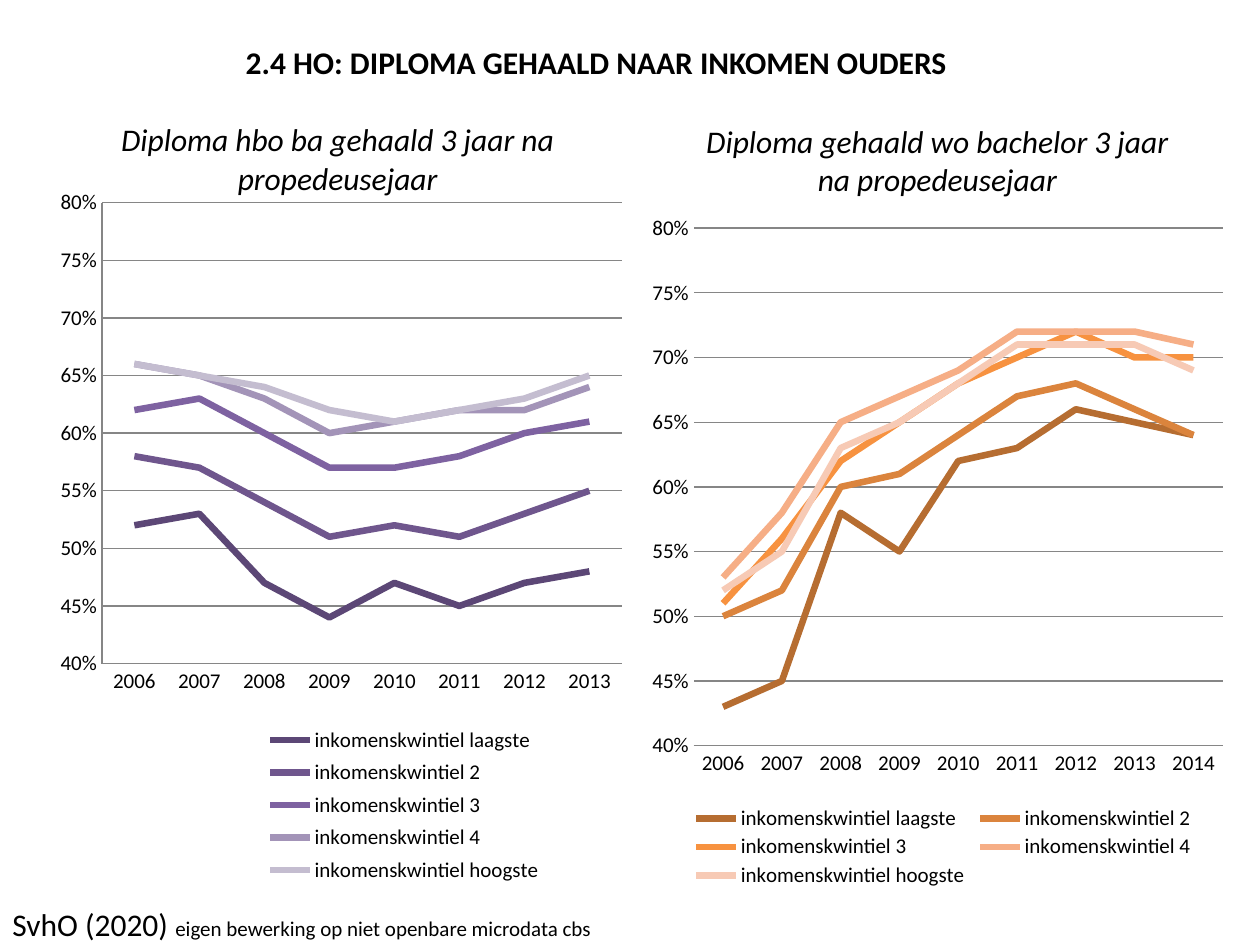
from dataclasses import dataclass
from typing import Optional

from lxml.etree import SubElement
from pptx import Presentation
from pptx.chart.data import CategoryChartData
from pptx.dml.color import RGBColor
from pptx.enum.chart import XL_CHART_TYPE, XL_LEGEND_POSITION, XL_TICK_MARK
from pptx.enum.text import MSO_ANCHOR, PP_ALIGN
from pptx.oxml.ns import qn
from pptx.util import Pt


@dataclass(frozen=True)
class Theme:
    font: str = "Calibri"
    text: str = "000000"
    grid: str = "868686"
    purples: tuple = ("5C4776", "6F568D", "7E62A1", "A394B8", "C4BDD0")
    oranges: tuple = ("B66D31", "DB843D", "F79240", "F6AE86", "F7CAB5")
    title_size: float = 18
    small_size: float = 12
    line_width: float = 3.75
    grid_width: float = 0.75


@dataclass(frozen=True)
class LinePanel:
    title: str
    box: tuple  # left, top, width, height in points
    first_year: int
    values: tuple  # one row of percentages per income quintile
    colors: tuple
    plot: tuple  # x, y, w, h as fractions of the chart
    legend: tuple
    axis_color: Optional[str]


THEME = Theme()
QUINTILES = [f"inkomenskwintiel {q}" for q in ("laagste", 2, 3, 4, "hoogste")]

PANELS = (
    LinePanel(
        "Diploma gehaald wo bachelor 3 jaar na propedeusejaar",
        (365.8, 51.8, 339.8, 462.2), 2006,
        ((43, 45, 58, 55, 62, 63, 66, 65, 64),
         (50, 52, 60, 61, 64, 67, 68, 66, 64),
         (51, 56, 62, 65, 68, 70, 72, 70, 70),
         (53, 58, 65, 67, 69, 72, 72, 72, 71),
         (52, 55, 63, 65, 68, 71, 71, 71, 69)),
        THEME.oranges, (0.09, 0.17, 0.89, 0.64), (0.08, 0.88, 0.86, 0.11), None),
    LinePanel(
        "Diploma hbo ba gehaald 3 jaar na propedeusejaar",
        (20.2, 51.1, 345.6, 462.2), 2006,
        ((52, 53, 47, 44, 47, 45, 47, 48),
         (58, 57, 54, 51, 52, 51, 53, 55),
         (62, 63, 60, 57, 57, 58, 60, 61),
         (66, 65, 63, 60, 61, 62, 62, 64),
         (66, 65, 64, 62, 61, 62, 63, 65)),
        THEME.purples, (0.11, 0.14, 0.86, 0.57), (0.37, 0.78, 0.48, 0.21), THEME.grid),
)


def style_font(font, size: float, bold: bool = False, italic: bool = False) -> None:
    font.name, font.size = THEME.font, Pt(size)
    font.bold, font.italic = bold, italic
    font.color.rgb = RGBColor.from_string(THEME.text)


def style_line(line, color: Optional[str], width: float) -> None:
    if color is None:
        line.fill.background()
        return
    line.color.rgb = RGBColor.from_string(color)
    line.width = Pt(width)


def set_layout(parent, index: int, box: tuple, inner: bool = False) -> None:
    """Place a plot area or legend by fractions of the chart."""
    for old in parent.findall(qn("c:layout")):
        parent.remove(old)
    layout = SubElement(parent, qn("c:layout"))
    parent.insert(index, layout)
    manual = SubElement(layout, qn("c:manualLayout"))
    settings = [("layoutTarget", "inner")] if inner else []
    settings += [("xMode", "edge"), ("yMode", "edge")]
    settings += zip("xywh", box)
    for tag, value in settings:
        SubElement(manual, qn(f"c:{tag}")).set("val", str(value))


def add_panel(slide, panel: LinePanel) -> None:
    data = CategoryChartData(number_format="0%")
    data.categories = [str(panel.first_year + i) for i in range(len(panel.values[0]))]
    for name, row in zip(QUINTILES, panel.values):
        data.add_series(name, [v / 100 for v in row])
    box = [Pt(v) for v in panel.box]
    chart = slide.shapes.add_chart(XL_CHART_TYPE.LINE, *box, data).chart
    style_font(chart.font, THEME.small_size)

    # Title
    tf = chart.chart_title.text_frame
    tf.text = panel.title
    style_font(tf.paragraphs[0].runs[0].font, THEME.title_size, italic=True)
    chart.chart_title.include_in_layout = False

    # Axes
    cat, val = chart.category_axis, chart.value_axis
    for axis, color in ((cat, THEME.grid), (val, panel.axis_color)):
        axis.major_tick_mark = axis.minor_tick_mark = XL_TICK_MARK.NONE
        style_font(axis.tick_labels.font, THEME.small_size)
        style_line(axis.format.line, color, THEME.grid_width)
    val.minimum_scale, val.maximum_scale, val.major_unit = 0.4, 0.8, 0.05
    val.tick_labels.number_format = "0%"
    val.tick_labels.number_format_is_linked = False
    val.has_major_gridlines = True
    style_line(val.major_gridlines.format.line, THEME.grid, THEME.grid_width)

    # Series
    chart.plots[0].vary_by_categories = False
    for series, color in zip(chart.plots[0].series, panel.colors):
        series.smooth = False
        style_line(series.format.line, color, THEME.line_width)

    # Legend and plot placement
    chart.has_legend = True
    legend = chart.legend
    legend.position = XL_LEGEND_POSITION.BOTTOM
    legend.include_in_layout = False
    style_font(legend.font, THEME.small_size)
    plot_area = chart.plots[0]._element.getparent()
    set_layout(plot_area, 0, panel.plot, inner=True)
    set_layout(legend._element, 1, panel.legend)


def add_heading(slide, text: str) -> None:
    sp = slide.shapes.title
    sp.left, sp.top, sp.width, sp.height = Pt(133.2), Pt(0), Pt(419), Pt(49.7)
    tf = sp.text_frame
    tf.text = text
    tf.word_wrap = False
    tf.vertical_anchor = MSO_ANCHOR.BOTTOM
    p = tf.paragraphs[0]
    p.alignment = PP_ALIGN.LEFT
    style_font(p.runs[0].font, THEME.title_size, bold=True)


def add_source(slide) -> None:
    sp = slide.shapes.add_textbox(Pt(0), Pt(513.4), Pt(348.5), Pt(26.6))
    p = sp.text_frame.paragraphs[0]
    for text, size in (("SvhO (2020) ", THEME.title_size),
                       ("eigen bewerking op niet openbare microdata cbs", THEME.small_size)):
        r = p.add_run()
        r.text = text
        style_font(r.font, size)


def main() -> None:
    prs = Presentation()
    prs.slide_width, prs.slide_height = Pt(720), Pt(540)
    slide = prs.slides.add_slide(prs.slide_layouts[5])
    add_heading(slide, "2.4 HO: DIPLOMA GEHAALD NAAR INKOMEN OUDERS")
    add_source(slide)
    for panel in PANELS:
        add_panel(slide, panel)
    prs.save("out.pptx")


if __name__ == "__main__":
    main()
